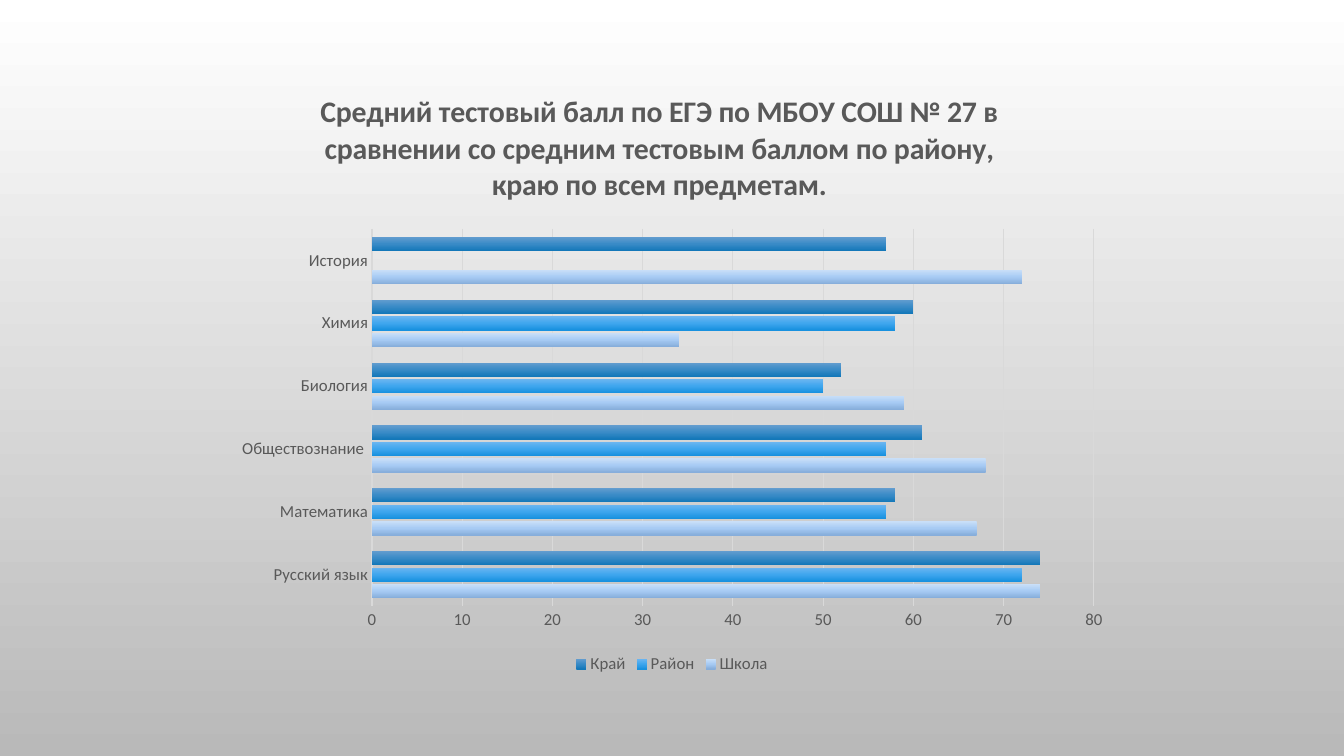
from lxml import etree
from pptx import Presentation
from pptx.chart.data import CategoryChartData
from pptx.dml.color import RGBColor
from pptx.enum import chart as ch
from pptx.oxml import ns
from pptx.util import Pt

PX = 914400 / 100.8
FONT = "Calibri"
COLORS = {
    "text": "595959",
    "line": "D9D9D9",
    "background": ["FFFFFF", "B9B9B9"],
    "Школа": ["C9DFF8", "A7CBF4", "87AEDB"],
    "Район": ["6CB6F1", "3FA6EE", "1891DF"],
    "Край": ["639DCF", "3A8BC7", "1478B9"],
}
TITLE = ("Средний тестовый балл по ЕГЭ по МБОУ СОШ № 27 в сравнении "
         "со средним тестовым баллом по району, краю по всем предметам.")
SUBJECTS = ["Русский язык", "Математика", "Обществознание ",
            "Биология", "Химия", "История"]
SCORES = {
    "Школа": [74, 67, 68, 59, 34, 72],
    "Район": [72, 57, 57, 50, 58, None],
    "Край": [74, 58, 61, 52, 60, 57],
}
CHART_BOX = (224, 80, 896, 598)
PLOT_BOX = (372, 229, 722, 377)
TITLE_CORNER = (315, 85)


def px(n):
    return round(n * PX)


def rgb(name):
    return RGBColor.from_string(COLORS[name])


def style_font(font, size, bold=False):
    font.name = FONT
    font.size = Pt(size)
    font.bold = bold
    font.color.rgb = rgb("text")


def fill_gradient(fill, element, hexes):
    fill.gradient()
    fill.gradient_angle = 270
    stops = element.xpath(".//a:gsLst")[0]
    for stop in list(stops):
        stops.remove(stop)
    for i, value in enumerate(hexes):
        pos = str(100000 * i // (len(hexes) - 1))
        stop = etree.SubElement(stops, ns.qn("a:gs"), pos=pos)
        etree.SubElement(stop, ns.qn("a:srgbClr"), val=value)


def place(parent, index, box, inner=False):
    for old in parent.findall(ns.qn("c:layout")):
        parent.remove(old)
    layout = etree.Element(ns.qn("c:layout"))
    manual = etree.SubElement(layout, ns.qn("c:manualLayout"))
    left, top, width, height = CHART_BOX
    fractions = [(box[0] - left) / width, (box[1] - top) / height]
    fractions += [n / total for n, total in zip(box[2:], (width, height))]
    settings = [("layoutTarget", "inner")] if inner else []
    settings += [("xMode", "edge"), ("yMode", "edge")]
    settings += [(k, f"{v:.4f}") for k, v in zip("xywh", fractions)]
    for tag, value in settings:
        etree.SubElement(manual, ns.qn(f"c:{tag}"), val=value)
    parent.insert(index, layout)


def style_title(chart):
    chart.has_title = True
    tf = chart.chart_title.text_frame
    tf.text = TITLE
    style_font(tf.paragraphs[0].font, 21.3, True)
    chart.chart_title.include_in_layout = False
    place(chart.element.xpath("c:chart/c:title")[0], 1, TITLE_CORNER)


def style_axes(chart):
    for axis in (chart.category_axis, chart.value_axis):
        axis.major_tick_mark = axis.minor_tick_mark = ch.XL_TICK_MARK.NONE
        style_font(axis.tick_labels.font, 12)
    line = chart.category_axis.format.line
    line.color.rgb = rgb("line")
    line.width = Pt(1)
    values = chart.value_axis
    values.minimum_scale, values.maximum_scale, values.major_unit = 0, 80, 10
    values.format.line.fill.background()
    values.has_major_gridlines = True
    grid = values.major_gridlines.format.line
    grid.color.rgb = rgb("line")
    grid.width = Pt(0.75)


def add_score_chart(s):
    data = CategoryChartData()
    data.categories = SUBJECTS
    for name, scores in SCORES.items():
        data.add_series(name, scores)
    box = [px(n) for n in CHART_BOX]
    chart = s.shapes.add_chart(ch.XL_CHART_TYPE.BAR_CLUSTERED, *box, data).chart
    chart.font.name = FONT
    chart.font.size = Pt(10)
    style_title(chart)
    style_axes(chart)
    plot = chart.plots[0]
    plot.gap_width, plot.overlap, plot.vary_by_categories = 115, -20, False
    for series, element in zip(plot.series, chart.element.xpath(".//c:ser")):
        fill_gradient(series.format.fill, element, COLORS[series.name])
    chart.has_legend = True
    chart.legend.position = ch.XL_LEGEND_POSITION.BOTTOM
    chart.legend.include_in_layout = False
    style_font(chart.legend.font, 12)
    place(chart.element.xpath("c:chart/c:plotArea")[0], 0, PLOT_BOX, True)


def main():
    prs = Presentation()
    prs.slide_width, prs.slide_height = px(1344), px(756)
    s = prs.slides.add_slide(prs.slide_layouts[6])
    fill_gradient(s.background.fill, s.element, COLORS["background"])
    add_score_chart(s)
    prs.save("out.pptx")


if __name__ == "__main__":
    main()
